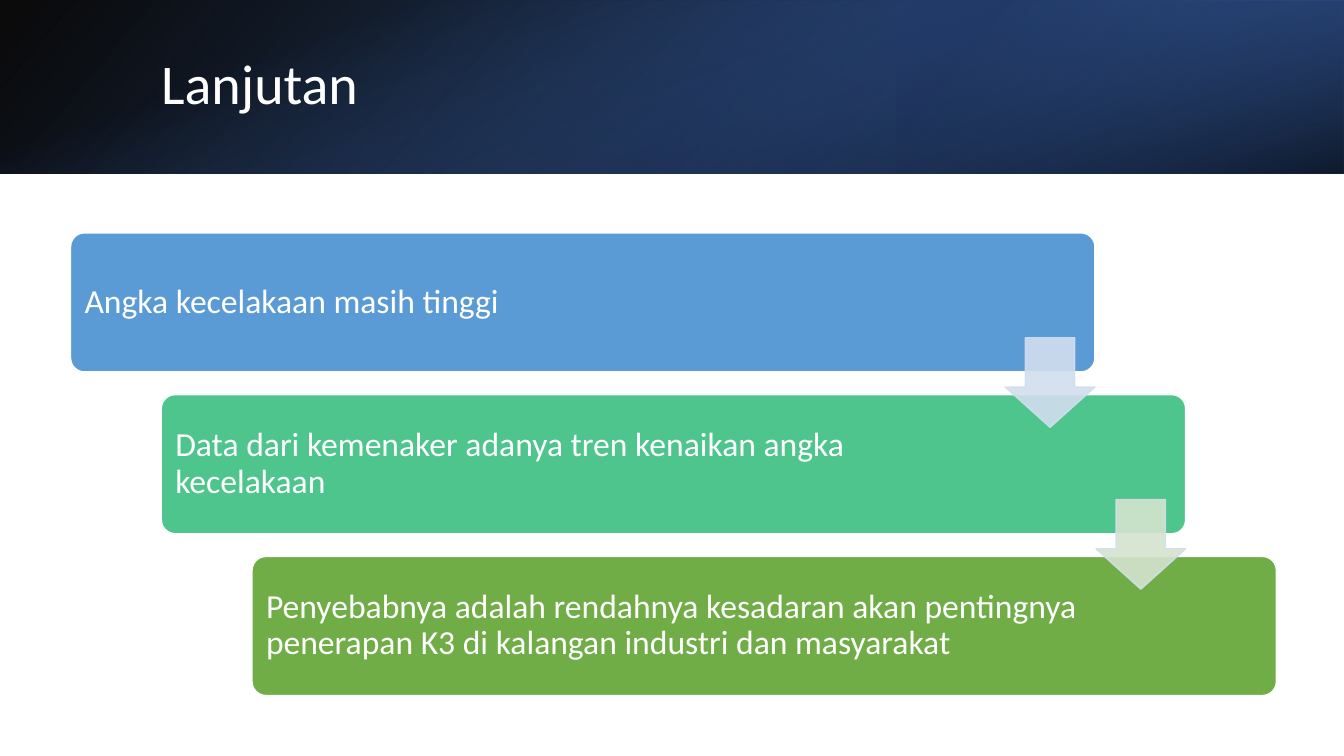
from dataclasses import dataclass

from lxml import etree
from pptx import Presentation
from pptx.dml.color import RGBColor
from pptx.enum.shapes import MSO_SHAPE
from pptx.enum.text import MSO_ANCHOR
from pptx.oxml.ns import qn
from pptx.shapes.autoshape import Shape
from pptx.slide import Slide
from pptx.util import Inches, Pt

RECTANGLE = MSO_SHAPE.RECTANGLE
ROUNDED = MSO_SHAPE.ROUNDED_RECTANGLE
DOWN_ARROW = MSO_SHAPE.DOWN_ARROW
MIDDLE = MSO_ANCHOR.MIDDLE

COLORS = {
    "white": "FFFFFF",
    "black": "000000",
    "navy": "203864",
    "royal": "2F5597",
    "accent": "4472C4",
    "blue": "5B9BD5",
    "teal": "4DC58D",
    "green": "70AD47",
    "pale_blue": "D2DEEF",
    "pale_green": "D5E3CF",
}

STEP_LEFT, STEP_TOP = 0.7, 2.31
STEP_WIDTH, STEP_HEIGHT = 10.16, 1.38
SHIFT_X, SHIFT_Y = 0.9, 1.605
TEXT_MARGIN = 0.04
ARROW_LEFT, ARROW_TOP, ARROW_SIZE = 9.97, 3.35, 0.89


@dataclass(frozen=True)
class Area:
    left: float
    top: float
    width: float
    height: float

    def lengths(self) -> tuple:
        return tuple(Inches(v) for v in (self.left, self.top, self.width, self.height))


@dataclass(frozen=True)
class Stop:
    position: float
    color: str
    opacity: int


@dataclass(frozen=True)
class Band:
    area: Area
    stops: tuple[Stop, Stop]
    angle: int
    rotation: int = 0
    flipped: bool = False


@dataclass(frozen=True)
class Step:
    text: str
    color: str
    text_width: float


BANDS = (
    Band(Area(0, 0, 13.33, 1.72),
         (Stop(0, "black", 96), Stop(1, "royal", 100)), 140, flipped=True),
    Band(Area(8.89, 0, 4.44, 1.72),
         (Stop(0.19, "navy", 68), Stop(1, "accent", 79)), 320, 180, True),
    Band(Area(5.8, -5.8, 1.72, 13.33),
         (Stop(0.23, "accent", 0), Stop(0.99, "black", 74)), 340, 90),
)

STEPS = (
    Step("Angka kecelakaan masih tinggi", "blue", 8.67),
    Step("Data dari kemenaker adanya tren kenaikan angka kecelakaan", "teal", 8.29),
    Step("Penyebabnya adalah rendahnya kesadaran akan pentingnya "
         "penerapan K3 di kalangan industri dan masyarakat", "green", 8.29),
)

ARROW_COLORS = ("pale_blue", "pale_green")


def rgb(name: str) -> RGBColor:
    return RGBColor.from_string(COLORS[name])


def set_opacity(shape: Shape, percents: tuple[int, ...]) -> None:
    colors = list(shape._element.spPr.iter(qn("a:srgbClr")))
    for color, percent in zip(colors, percents):
        etree.SubElement(color, qn("a:alpha")).set("val", str(percent * 1000))


def add_band(page: Slide, band: Band) -> None:
    shape = page.shapes.add_shape(RECTANGLE, *band.area.lengths())
    shape.shadow.inherit = False
    shape.line.fill.background()
    shape.rotation = band.rotation
    if band.flipped:
        shape._element.spPr.xfrm.set("flipH", "1")
    shape.fill.gradient()
    shape.fill.gradient_angle = 360 - band.angle
    for target, stop in zip(shape.fill.gradient_stops, band.stops):
        target.position = stop.position
        target.color.rgb = rgb(stop.color)
    set_opacity(shape, tuple(stop.opacity for stop in band.stops))


def add_solid(page: Slide, kind: MSO_SHAPE, area: Area, fill: str, line: str,
              adjustments: tuple[float, ...]) -> Shape:
    shape = page.shapes.add_shape(kind, *area.lengths())
    shape.shadow.inherit = False
    shape.fill.solid()
    shape.fill.fore_color.rgb = rgb(fill)
    shape.line.color.rgb = rgb(line)
    shape.line.width = Pt(1)
    for index, value in enumerate(adjustments):
        shape.adjustments[index] = value
    return shape


def add_text(page: Slide, area: Area, text: str, size: int, inset_y: float) -> None:
    frame = page.shapes.add_textbox(*area.lengths()).text_frame
    frame_format = {
        "word_wrap": True,
        "vertical_anchor": MIDDLE,
        "margin_left": Inches(0.1),
        "margin_right": Inches(0.1),
        "margin_top": Inches(inset_y),
        "margin_bottom": Inches(inset_y),
    }
    for name, value in frame_format.items():
        setattr(frame, name, value)
    para = frame.paragraphs[0]
    para.line_spacing = 0.9
    span = para.add_run()
    span.text = text
    for name, value in {"name": "Calibri", "size": Pt(size)}.items():
        setattr(span.font, name, value)
    span.font.color.rgb = rgb("white")


def add_step(page: Slide, index: int, step: Step) -> None:
    left = STEP_LEFT + index * SHIFT_X
    top = STEP_TOP + index * SHIFT_Y
    add_solid(page, ROUNDED, Area(left, top, STEP_WIDTH, STEP_HEIGHT),
              step.color, "white", (0.1,))
    text_area = Area(left + TEXT_MARGIN, top + TEXT_MARGIN,
                     step.text_width, STEP_HEIGHT - 2 * TEXT_MARGIN)
    add_text(page, text_area, step.text, 24, 0.1)


def add_arrow(page: Slide, index: int, color: str) -> None:
    area = Area(ARROW_LEFT + index * SHIFT_X, ARROW_TOP + index * SHIFT_Y,
                ARROW_SIZE, ARROW_SIZE)
    arrow = add_solid(page, DOWN_ARROW, area, color, "pale_blue", (0.55, 0.45))
    set_opacity(arrow, (90, 90))


def main() -> None:
    deck = Presentation()
    deck.slide_width, deck.slide_height = Inches(13.33), Inches(7.5)
    page = deck.slides.add_slide(deck.slide_layouts[6])
    for band in BANDS:
        add_band(page, band)
    add_text(page, Area(1.5, 0.38, 10.98, 0.96), "Lanjutan", 40, 0.05)
    for index, step in enumerate(STEPS):
        add_step(page, index, step)
    for index, color in enumerate(ARROW_COLORS):
        add_arrow(page, index, color)
    deck.save("out.pptx")


if __name__ == "__main__":
    main()
